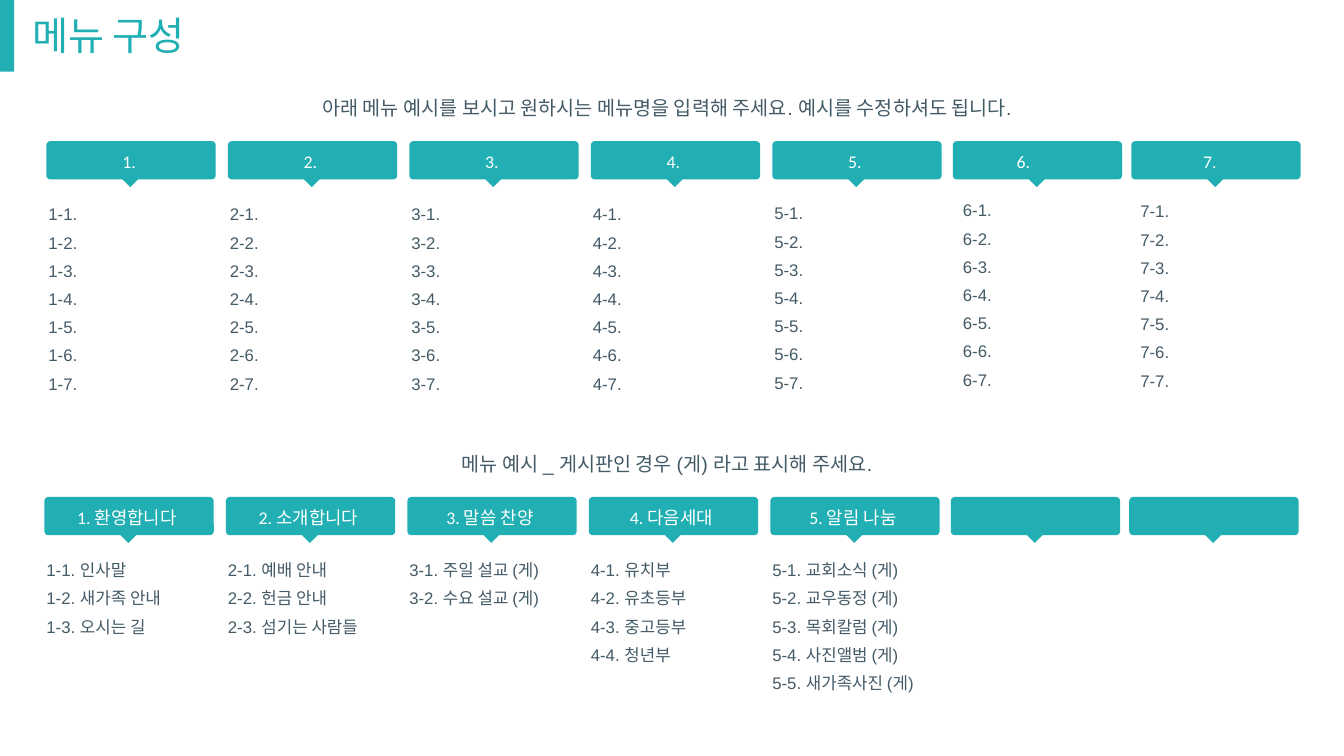
from pptx import Presentation
from pptx.dml.color import RGBColor
from pptx.enum.shapes import MSO_SHAPE as SHAPE
from pptx.enum.text import MSO_ANCHOR as ANCHOR, PP_ALIGN as ALIGN
from pptx.util import Inches, Pt

TEAL = RGBColor(0x21, 0xAF, 0xB4)
SLATE = RGBColor(0x43, 0x5A, 0x67)
WHITE = RGBColor(0xFF, 0xFF, 0xFF)

TITLE = "메뉴 구성"
REQUEST = "아래 메뉴 예시를 보시고 원하시는 메뉴명을 입력해 주세요. 예시를 수정하셔도 됩니다."
EXAMPLE = "메뉴 예시 _ 게시판인 경우 (게) 라고 표시해 주세요."

blank_menus = [(f"{n}.", [f"{n}-{i}." for i in range(1, 8)]) for n in range(1, 8)]
example_menus = [
    ("1. 환영합니다", ["1-1. 인사말", "1-2. 새가족 안내", "1-3. 오시는 길"]),
    ("2. 소개합니다", ["2-1. 예배 안내", "2-2. 헌금 안내", "2-3. 섬기는 사람들"]),
    ("3. 말씀 찬양", ["3-1. 주일 설교 (게)", "3-2. 수요 설교 (게)"]),
    ("4. 다음세대", ["4-1. 유치부", "4-2. 유초등부", "4-3. 중고등부", "4-4. 청년부"]),
    ("5. 알림 나눔", ["5-1. 교회소식 (게)", "5-2. 교우동정 (게)", "5-3. 목회칼럼 (게)",
                  "5-4. 사진앨범 (게)", "5-5. 새가족사진 (게)"]),
    ("", []),
    ("", []),
]

MENU_LEFTS = (0.44, 2.24, 4.04, 5.84, 7.64, 9.43, 11.2)
BLANK_SHIFT = 0.02
BAR_W, BAR_H = 1.68, 0.38
POINTER_W, POINTER_H = 0.26, 0.24
LABEL_W, LABEL_H = 1.2, 0.26
ITEMS_W = 1.6
LABEL_NUDGES = {"6.": -0.12, "7.": -0.04}
ITEM_NUDGES = {"5.": (0, -0.01), "6.": (0.08, -0.04), "7.": (0.07, -0.03)}

TITLE_STYLE = {"size": Pt(28), "name": "Arial", "color": TEAL}
GUIDE_STYLE = {"size": Pt(14), "name": "Arial", "color": SLATE}
LABEL_STYLE = {"size": Pt(12.7), "name": "Calibri", "color": WHITE}
ITEM_STYLE = {"size": Pt(12), "name": "Arial", "color": SLATE}
ITEM_SPACING = {"line_spacing": 1.2, "space_before": Pt(2.9)}


def add_block(shapes, preset, left, top, width, height):
    block = shapes.add_shape(preset, Inches(left), Inches(top), Inches(width), Inches(height))
    block.shadow.inherit = False
    block.fill.solid()
    block.fill.fore_color.rgb = TEAL
    block.line.fill.background()
    return block


def add_text(shapes, lines, box, style, paragraph_format, inset=0.02,
             anchor=ANCHOR.TOP, wrap=True):
    frame = shapes.add_textbox(*map(Inches, box)).text_frame
    margins = {f"margin_{side}": Inches(inset) for side in ("left", "top", "right", "bottom")}
    for key, value in {"word_wrap": wrap, "vertical_anchor": anchor, **margins}.items():
        setattr(frame, key, value)
    for i, line in enumerate(lines):
        paragraph = frame.add_paragraph() if i else frame.paragraphs[0]
        for key, value in paragraph_format.items():
            setattr(paragraph, key, value)
        run = paragraph.add_run()
        run.text = line
        run.font.size, run.font.name = style["size"], style["name"]
        run.font.color.rgb = style["color"]


def add_menu(slide, label, items, left, top, items_height):
    shapes = slide.shapes.add_group_shape().shapes
    center = left + BAR_W / 2
    bar = add_block(shapes, SHAPE.ROUNDED_RECTANGLE, left, top, BAR_W, BAR_H)
    bar.adjustments[0] = 0.106
    pointer = add_block(shapes, SHAPE.RECTANGLE, center - POINTER_W / 2, top + 0.16,
                        POINTER_W, POINTER_H)
    pointer.rotation = 315
    if label:
        label_left = center - LABEL_W / 2 - 0.02 + LABEL_NUDGES.get(label, 0)
        add_text(shapes, [label], (label_left, top + 0.07, LABEL_W, LABEL_H), LABEL_STYLE,
                 {"alignment": ALIGN.CENTER}, anchor=ANCHOR.MIDDLE, wrap=False)
    if items:
        dx, dy = ITEM_NUDGES.get(label, (0, 0))
        add_text(shapes, items, (left + dx, top + 0.565 + dy, ITEMS_W, items_height),
                 ITEM_STYLE, ITEM_SPACING)


def main():
    deck = Presentation()
    deck.slide_width, deck.slide_height = Inches(13.33), Inches(7.5)
    slide = deck.slides.add_slide(deck.slide_layouts[6])

    add_block(slide.shapes, SHAPE.RECTANGLE, -0.01, 0, 0.15, 0.71)
    add_text(slide.shapes, [TITLE], (0.22, 0.13, 6.07, 0.49), TITLE_STYLE,
             {"line_spacing": 0.9}, inset=0.1, anchor=ANCHOR.MIDDLE)

    for guide, guide_left, guide_top, menus, shift, menu_top, items_height in (
        (REQUEST, 1.62, 0.93, blank_menus, BLANK_SHIFT, 1.4, 1.95),
        (EXAMPLE, 1.62, 4.46, example_menus, 0, 4.93, 1.41),
    ):
        add_text(slide.shapes, [guide], (guide_left, guide_top, 9.99, 0.33), GUIDE_STYLE,
                 {"alignment": ALIGN.CENTER})
        for left, (label, items) in zip(MENU_LEFTS, menus):
            add_menu(slide, label, items, left + shift, menu_top, items_height)

    deck.save("out.pptx")


if __name__ == "__main__":
    main()
